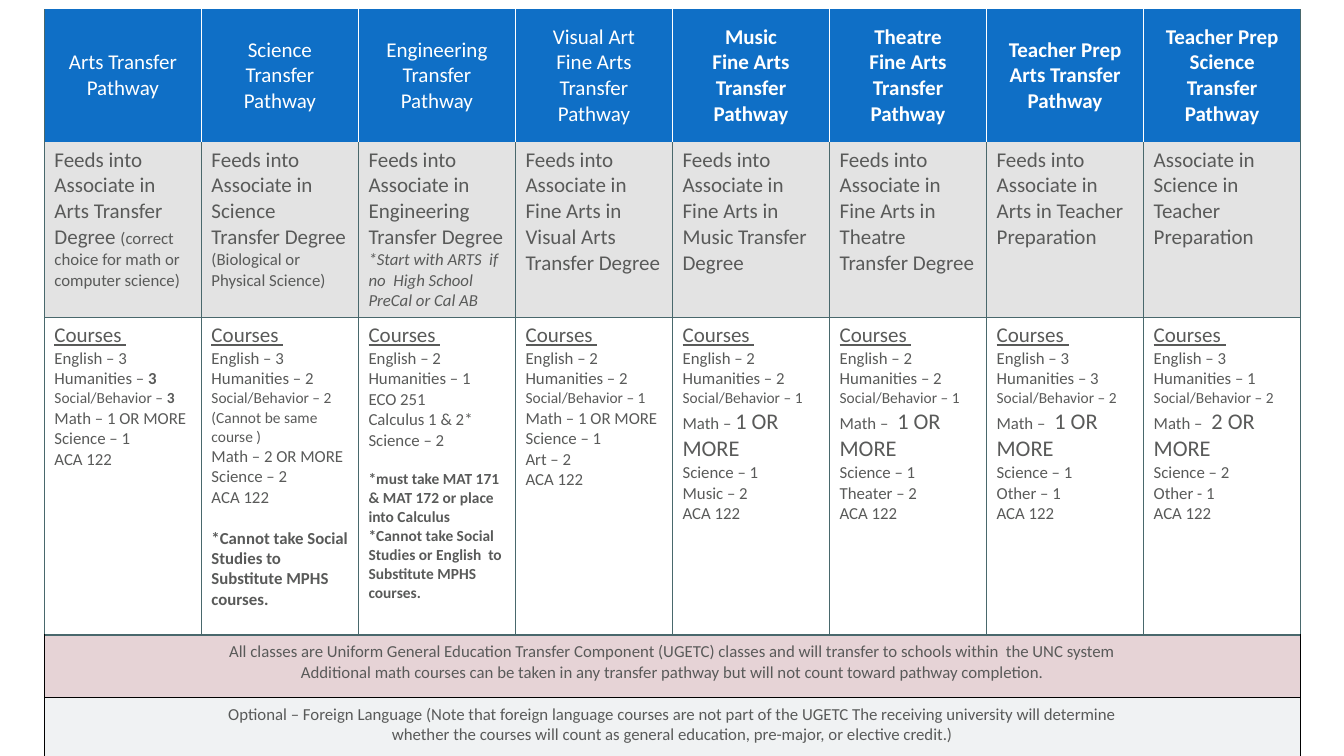
from dataclasses import dataclass, field

from lxml.etree import SubElement
from pptx import Presentation
from pptx.dml.color import RGBColor as RGB
from pptx.enum.text import MSO_ANCHOR as Anchor, PP_ALIGN as Align
from pptx.oxml.ns import qn
from pptx.util import Inches, Pt

PLAIN_TABLE = "{2D5ABB26-0587-4C30-8999-92F81FD0307C}"


@dataclass
class Theme:
    font: str = "Calibri"
    white: str = "FFFFFF"
    text: str = "595A59"
    blue: str = "0F6FC6"
    gray: str = "777777"
    red: str = "862633"
    silver: str = "B8C1C3"
    teal: str = "49686C"
    black: str = "000000"
    tint: int = 20
    base: dict = field(default_factory=lambda: {
        "bold": False, "italic": False, "underline": False})
    styles: dict = field(default_factory=lambda: {
        "head": {"size": Pt(15)},
        "head bold": {"size": Pt(15), "bold": True},
        "degree": {"size": Pt(15)},
        "title": {"size": Pt(15), "underline": True},
        "large": {"size": Pt(16)},
        "small": {"size": Pt(12)},
        "small bold": {"size": Pt(12), "bold": True},
        "aside": {"size": Pt(12), "italic": True},
        "tiny": {"size": Pt(11)},
        "tiny bold": {"size": Pt(11), "bold": True},
    })


@dataclass
class Line:
    """One paragraph: (text, style) spans and the space above in points."""
    spans: list
    before: float = 0


def line(text, style="small", before=0):
    return Line([(text, style)], before)


def course_list(english, humanities, *rest):
    """Lines of a course cell; plain strings in rest become small text."""
    lines = [line("Courses ", "title"), line(f"English – {english}")]
    if isinstance(humanities, Line):
        lines.append(humanities)
    else:
        lines.append(line(f"Humanities – {humanities}"))
    return lines + [line(item) if isinstance(item, str) else item for item in rest]


def long_math_list(english, humanities, social, math, science, extra):
    """Course cell whose math requirement is set in large type."""
    return course_list(
        english, humanities, line(f"Social/Behavior – {social}", "tiny"),
        Line([("Math – ", "small"), (math, "large")]),
        f"Science – {science}", extra, "ACA 122")


HEADS = [
    ["Arts Transfer Pathway"],
    ["Science Transfer Pathway"],
    ["Engineering Transfer Pathway"],
    ["Visual Art", "Fine Arts Transfer Pathway"],
    ["Music", "Fine Arts Transfer Pathway"],
    ["Theatre", "Fine Arts Transfer Pathway"],
    ["Teacher Prep Arts Transfer Pathway"],
    ["Teacher Prep Science Transfer Pathway"],
]
FIRST_BOLD_HEAD = 4

DEGREES = [
    [Line([("Feeds into Associate in Arts Transfer Degree ", "degree"),
           ("(correct choice for math or computer science)", "small")])],
    [Line([("Feeds into Associate in Science Transfer Degree ", "degree"),
           ("(Biological or Physical Science)", "small")])],
    [line("Feeds into Associate in Engineering Transfer Degree", "degree"),
     line("*Start with ARTS  if no  High School  PreCal or Cal AB", "aside")],
    [line("Feeds into Associate in Fine Arts in Visual Arts Transfer Degree", "degree")],
    [line("Feeds into Associate in Fine Arts in Music Transfer Degree", "degree")],
    [line("Feeds into Associate in Fine Arts in Theatre Transfer Degree", "degree")],
    [line("Feeds into Associate in Arts in Teacher Preparation", "degree")],
    [line("Associate in Science in Teacher Preparation", "degree")],
]

COURSES = [
    course_list(3, Line([("Humanities – ", "small"), ("3", "small bold")]),
                Line([("Social/Behavior –", "tiny"), (" 3", "tiny bold")]),
                "Math – 1 OR MORE", "Science – 1", "ACA 122"),
    course_list(3, 2, line("Social/Behavior – 2 (Cannot be same course )", "tiny"),
                "Math – 2 OR MORE", "Science – 2", "ACA 122",
                line("*Cannot take Social Studies to Substitute MPHS courses.",
                     "small bold", 14.6)),
    course_list(2, 1, "ECO 251", "Calculus 1 & 2*", "Science – 2",
                line("*must take MAT 171 & MAT 172 or place into Calculus",
                     "tiny bold", 13.4),
                line("*Cannot take Social Studies or English  to Substitute "
                     "MPHS courses.", "tiny bold")),
    course_list(2, 2, line("Social/Behavior – 1", "tiny"), "Math – 1 OR MORE",
                "Science – 1", "Art – 2", "ACA 122"),
    long_math_list(2, 2, 1, "1 OR MORE", 1, "Music – 2"),
    long_math_list(2, 2, 1, " 1 OR MORE", 1, "Theater – 2"),
    long_math_list(3, 3, 2, " 1 OR MORE", 1, "Other – 1"),
    long_math_list(3, 1, 2, " 2 OR MORE", 2, "Other - 1"),
]

TRANSFER_NOTE = [
    line("All classes are Uniform General Education Transfer Component (UGETC) "
         "classes and will transfer to schools within  the UNC system"),
    line("Additional math courses can be taken in any transfer pathway but will "
         "not count toward pathway completion."),
]
LANGUAGE_NOTE = [
    line("Optional – Foreign Language (Note that foreign language courses are not "
         "part of the UGETC The receiving university will determine"),
    line("whether the courses will count as general education, pre-major, or "
         "elective credit.)"),
]
ROW_HEIGHTS = [1.32, 1.74, 3.15, 0.62, 0.62]


class SlideBuilder:
    def __init__(self, deck, theme):
        self.theme = theme
        self.page = deck.slides.add_slide(deck.slide_layouts[6])

    def table(self, left, top, width, heights, columns):
        frame = self.page.shapes.add_table(
            len(heights), columns, Inches(left), Inches(top),
            Inches(width), Inches(sum(heights)))
        table = frame.table
        table.first_row = table.horz_banding = False
        table._tbl.tblPr.find(qn("a:tableStyleId")).text = PLAIN_TABLE
        for row, height in zip(table.rows, heights):
            row.height = Inches(height)
        return table

    def borders(self, cell, colors):
        """Draw 1 pt borders from a dict keyed by side: L, R, T or B."""
        properties = cell._tc.get_or_add_tcPr()
        for side in "LRTB":
            if side in colors:
                edge = SubElement(properties, qn(f"a:ln{side}"), w=str(Pt(1)))
                fill = SubElement(edge, qn("a:solidFill"))
                SubElement(fill, qn("a:srgbClr"), val=colors[side])

    def fill(self, cell, color, opacity=100):
        if color is None:
            cell.fill.background()
            return
        cell.fill.solid()
        cell.fill.fore_color.rgb = RGB.from_string(color)
        if opacity < 100:
            shade = cell._tc.tcPr.find(qn("a:solidFill")).find(qn("a:srgbClr"))
            SubElement(shade, qn("a:alpha"), val=str(opacity * 1000))

    def text(self, cell, lines, color, align=Align.LEFT, anchor=Anchor.TOP,
             margins=(0.1, 0.05)):
        side, end = map(Inches, margins)
        layout = {"margin_left": side, "margin_right": side, "margin_top": end,
                  "margin_bottom": end, "vertical_anchor": anchor}
        for name, value in layout.items():
            setattr(cell, name, value)
        frame = cell.text_frame
        for index, item in enumerate(lines):
            para = frame.add_paragraph() if index else frame.paragraphs[0]
            para.alignment = align
            if item.before:
                para.space_before = Pt(item.before)
            for words, style in item.spans:
                span = para.add_run()
                span.text = words
                span.font.color.rgb = RGB.from_string(color)
                look = {"name": self.theme.font, **self.theme.base,
                        **self.theme.styles[style]}
                for name, value in look.items():
                    setattr(span.font, name, value)


def main():
    deck = Presentation()
    deck.slide_width, deck.slide_height = Inches(13.33), Inches(7.5)
    theme = Theme()
    builder = SlideBuilder(deck, theme)
    count = len(HEADS)
    table = builder.table(0.44, 0.09, 12.46, ROW_HEIGHTS, count)

    for column, (head, degree, courses) in enumerate(zip(HEADS, DEGREES, COURSES)):
        cells = [table.cell(row, column) for row in range(3)]
        builder.borders(cells[0], {"L": theme.white if column else theme.teal,
                                   "R": theme.white if column < count - 1 else theme.teal})
        builder.borders(cells[1], dict.fromkeys("LRB", theme.teal))
        builder.borders(cells[2], dict.fromkeys("LRTB", theme.teal))
        builder.fill(cells[0], theme.blue)
        builder.fill(cells[1], theme.gray, theme.tint)
        builder.fill(cells[2], None)
        style = "head bold" if column >= FIRST_BOLD_HEAD else "head"
        builder.text(cells[0], [line(words, style) for words in head],
                     theme.white, Align.CENTER, Anchor.MIDDLE)
        builder.text(cells[1], degree, theme.text)
        builder.text(cells[2], courses, theme.text)

    notes = [(TRANSFER_NOTE, theme.red, theme.teal),
             (LANGUAGE_NOTE, theme.silver, theme.black)]
    for row, (note, color, top) in enumerate(notes, start=3):
        for column in range(count):
            builder.borders(table.cell(row, column),
                            {**dict.fromkeys("LRB", theme.black), "T": top})
        cell = table.cell(row, 0)
        cell.merge(table.cell(row, count - 1))
        builder.fill(cell, color, theme.tint)
        builder.text(cell, note, theme.text, Align.CENTER, margins=(0.13, 0.07))

    deck.save("out.pptx")


if __name__ == "__main__":
    main()
